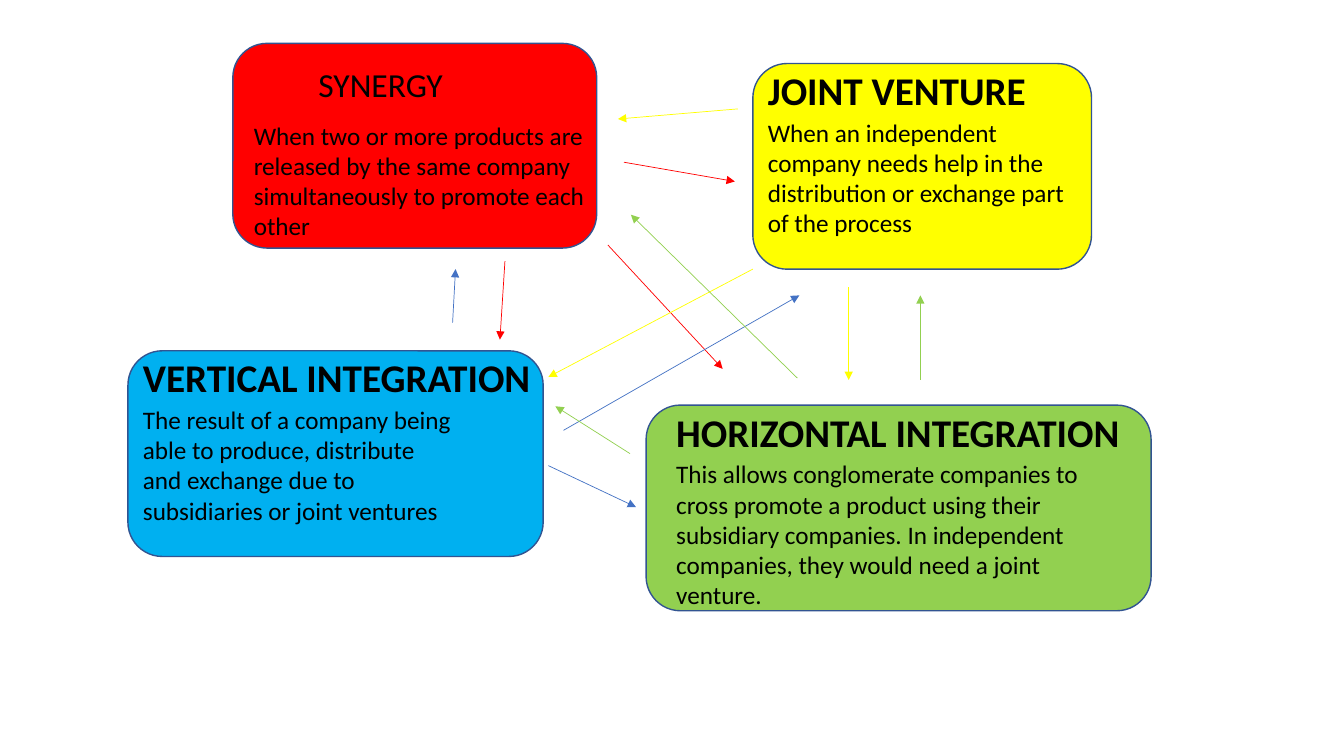
from lxml import etree
from pptx import Presentation
from pptx.dml.color import RGBColor
from pptx.enum import shapes, text
from pptx.oxml import ns
from pptx.util import Pt

RED, YELLOW, BLUE, GREEN = "FF0000", "FFFF00", "4472C4", "92D050"
SKY, OUTLINE, BLACK = "00B0F0", "325491", "000000"

# box fill, box frame, heading, heading size, heading frame, body, body frame
CARDS = [
    (RED, (166.3, 31, 259.9, 146.2),
     "SYNERGY", 24, (220.3, 41.8, 118.1, 36),
     "When two or more products are released by the same company "
     "simultaneously to promote each other", (174.2, 82.1, 251.3, 94.3)),
    (YELLOW, (537.8, 45.4, 241.9, 146.9),
     "JOINT VENTURE", 28, (541.4, 43.9, 227.5, 41),
     "When an independent company needs help in the distribution or "
     "exchange part of the process", (541.4, 79.9, 238.3, 94.3)),
    (SKY, (91.4, 250.6, 296.6, 146.9),
     "VERTICAL INTEGRATION", 28, (95, 249.1, 296.6, 41),
     "The result of a company being able to produce, distribute and "
     "exchange due to subsidiaries or joint ventures",
     (95, 285.1, 238.3, 94.3)),
    (GREEN, (461.5, 289.4, 360.7, 146.9),
     "HORIZONTAL INTEGRATION", 28, (475.9, 288, 349.9, 41),
     "This allows conglomerate companies to cross promote a product using "
     "their subsidiary companies. In independent companies, they would "
     "need a joint venture.", (475.9, 324, 324.7, 116.6)),
]

# start x, start y, end x, end y
ARROWS = {
    RED: [(445.7, 115.9, 524.9, 129.6), (434.2, 175, 516.2, 263.5),
          (360.7, 186.5, 357.1, 242.6)],
    YELLOW: [(527, 77.8, 441.4, 85), (606.2, 205.2, 606.2, 271.4),
             (537.8, 192.2, 391.7, 269.3)],
    BLUE: [(391.7, 332.6, 454.3, 362.2), (402.5, 307.4, 571, 211),
           (323.3, 230.4, 325.4, 192.2)],
    GREEN: [(657.4, 271.4, 657.4, 211), (569.5, 270, 450.7, 153.4),
            (450, 324, 396.7, 290.2)],
}


def color(value):
    return RGBColor.from_string(value)


class Diagram:
    """Holds the slide and the style shared by its elements."""
    font = "Calibri"

    def __init__(self, slide):
        self.slide = slide

    def box(self, frame, fill):
        shape = self.slide.shapes.add_shape(
            shapes.MSO_SHAPE.ROUNDED_RECTANGLE, *map(Pt, frame))
        shape.shadow.inherit = False
        shape.fill.solid()
        shape.fill.fore_color.rgb = color(fill)
        shape.line.color.rgb = color(OUTLINE)
        shape.line.width = Pt(1)

    def label(self, frame, words, size, bold=False):
        shape = self.slide.shapes.add_textbox(*map(Pt, frame))
        shape.text_frame.word_wrap = True
        shape.text_frame.auto_size = text.MSO_AUTO_SIZE.SHAPE_TO_FIT_TEXT
        run = shape.text_frame.paragraphs[0].add_run()
        run.text = words
        run.font.name = self.font
        run.font.size = Pt(size)
        run.font.bold = bold
        run.font.color.rgb = color(BLACK)

    def arrow(self, ends, stroke):
        connector = self.slide.shapes.add_connector(
            shapes.MSO_CONNECTOR.STRAIGHT, *map(Pt, ends))
        connector.line.color.rgb = color(stroke)
        connector.line.width = Pt(0.5)
        line = connector.line._get_or_add_ln()
        etree.SubElement(line, ns.qn("a:tailEnd"), type="triangle")
        etree.SubElement(connector._element.spPr, ns.qn("a:effectLst"))


def main():
    presentation = Presentation()
    presentation.slide_width = Pt(960)
    presentation.slide_height = Pt(540)
    blank = presentation.slide_layouts[6]
    diagram = Diagram(presentation.slides.add_slide(blank))
    for fill, box, heading, size, heading_frame, body, body_frame in CARDS:
        diagram.box(box, fill)
        diagram.label(heading_frame, heading, size, bold=size == 28)
        diagram.label(body_frame, body, 18)
    for stroke, arrows in ARROWS.items():
        for ends in arrows:
            diagram.arrow(ends, stroke)
    presentation.save("out.pptx")


if __name__ == "__main__":
    main()
